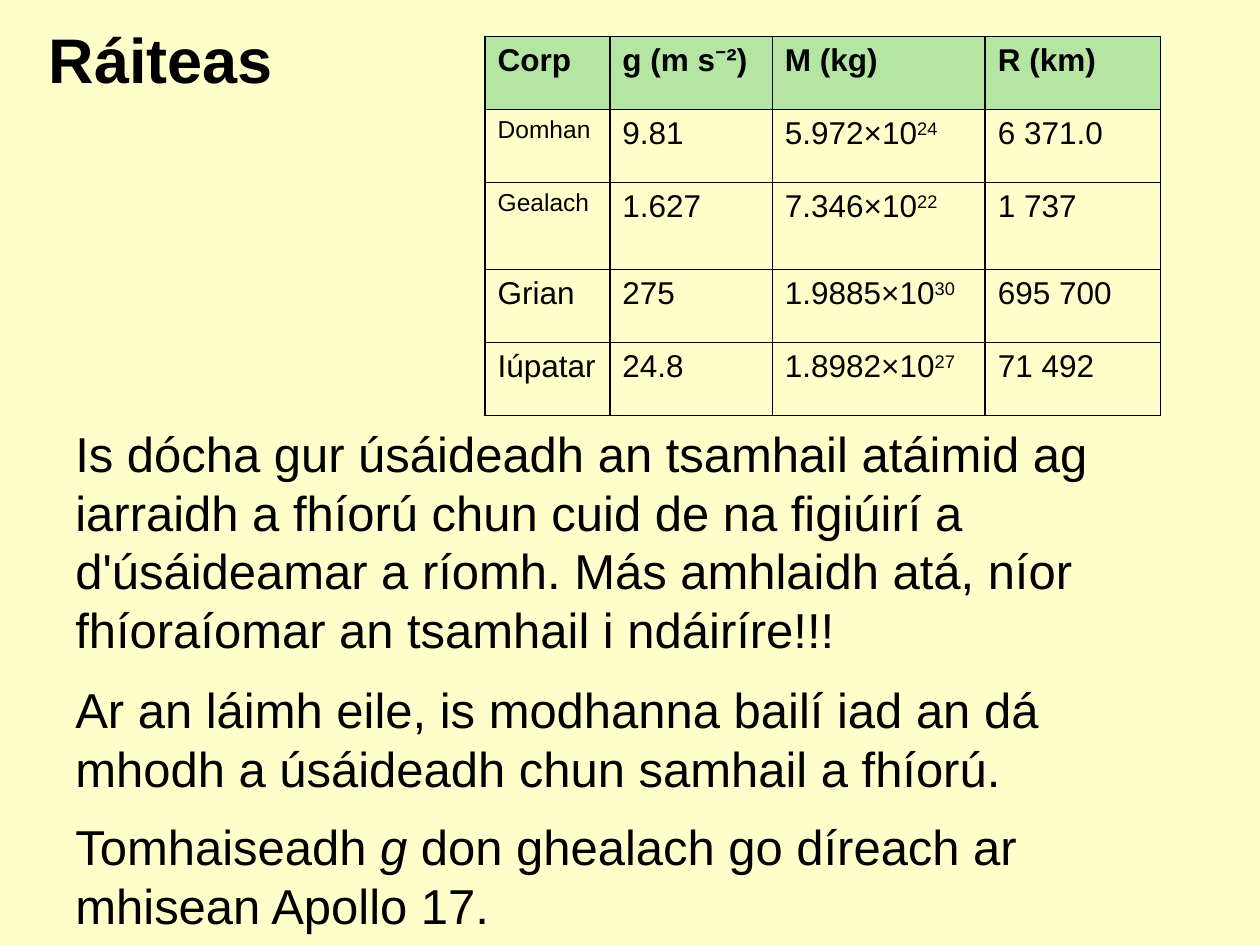
from lxml.etree import SubElement
from pptx import Presentation
from pptx.dml.color import RGBColor
from pptx.oxml.ns import qn
from pptx.util import Inches, Pt

CREAM = RGBColor(0xFF, 0xFF, 0xCC)
GREEN = RGBColor(0xB4, 0xE5, 0xA2)
BLACK = RGBColor(0, 0, 0)
FONT = "Arial"

COLUMN_WIDTHS = [0.99, 1.29, 1.69, 1.39]
ROW_HEIGHTS = [0.58, 0.58, 0.69, 0.58, 0.58]
HEADINGS = ["Corp", "g (m s⁻²)", "M (kg)", "R (km)"]
# Body, size of its name, gravity, mass digits, power of ten, radius
BODIES = [
    ("Domhan", 14, "9.81", "5.972", "24", "6 371.0"),
    ("Gealach", 14, "1.627", "7.346", "22", "1 737"),
    ("Grian", 18, "275", "1.9885", "30", "695 700"),
    ("Iúpatar", 18, "24.8", "1.8982", "27", "71 492"),
]


def add_span(para, text, size, bold=False, italic=False, superscript=False):
    span = para.add_run()
    span.text = text
    font = span.font
    font.name = FONT
    font.size = Pt(size)
    font.bold = bold
    font.italic = italic
    font.color.rgb = BLACK
    if superscript:
        span._r.get_or_add_rPr().set("baseline", "30000")


def add_text(page, left, top, width, height, paragraphs, size,
             bold=False, space_after=0, line_spacing=1.0):
    """Each paragraph is a list of (text, italic) pairs."""
    box = page.shapes.add_textbox(Inches(left), Inches(top), Inches(width), Inches(height))
    frame = box.text_frame
    frame.word_wrap = True
    for index, pieces in enumerate(paragraphs):
        para = frame.add_paragraph() if index else frame.paragraphs[0]
        para.space_after = Pt(space_after)
        para.line_spacing = line_spacing
        for text, italic in pieces:
            add_span(para, text, size, bold, italic)


def add_borders(cell):
    properties = cell._tc.get_or_add_tcPr()
    for index, side in enumerate(("a:lnL", "a:lnR", "a:lnT", "a:lnB")):
        line = properties.makeelement(qn(side), {"w": str(Pt(1))})
        fill = SubElement(line, qn("a:solidFill"))
        SubElement(fill, qn("a:srgbClr"), val=str(BLACK))
        properties.insert(index, line)


def add_bodies_table(page):
    frame = page.shapes.add_table(
        len(ROW_HEIGHTS), len(COLUMN_WIDTHS), Inches(3.85), Inches(0.29),
        Inches(sum(COLUMN_WIDTHS)), Inches(sum(ROW_HEIGHTS)))
    table = frame.table
    table.horz_banding = False
    for column, width in zip(table.columns, COLUMN_WIDTHS):
        column.width = Inches(width)
    for row, height in zip(table.rows, ROW_HEIGHTS):
        row.height = Inches(height)

    # Header row
    for cell, heading in zip(table.rows[0].cells, HEADINGS):
        cell.fill.solid()
        cell.fill.fore_color.rgb = GREEN
        add_span(cell.text_frame.paragraphs[0], heading, 18, bold=True)
        add_borders(cell)

    # One row for each body
    for number, (name, name_size, gravity, mass, power, radius) in enumerate(BODIES, 1):
        cells = list(table.rows[number].cells)
        texts = [name, gravity, f"{mass}×10", radius]
        sizes = [name_size, 18, 18, 18]
        for cell, text, size in zip(cells, texts, sizes):
            cell.fill.background()
            add_span(cell.text_frame.paragraphs[0], text, size)
            add_borders(cell)
        add_span(cells[2].text_frame.paragraphs[0], power, 18, superscript=True)


def main():
    deck = Presentation()
    deck.slide_width = Inches(10)
    deck.slide_height = Inches(7.5)
    page = deck.slides.add_slide(deck.slide_layouts[6])
    page.background.fill.solid()
    page.background.fill.fore_color.rgb = CREAM

    # Title
    add_text(page, 0.29, 0.18, 9.49, 0.65, [[("Ráiteas", False)]], 36,
             bold=True, line_spacing=0.9)

    add_bodies_table(page)

    # Discussion
    add_text(page, 0.5, 3.31, 9, 3.1, [
        [("Is dócha gur úsáideadh an tsamhail atáimid ag iarraidh a fhíorú chun "
          "cuid de na figiúirí a d'úsáideamar a ríomh. Más amhlaidh atá, níor "
          "fhíoraíomar an tsamhail i ndáiríre!!!", False)],
        [("Ar an láimh eile, is modhanna bailí iad an dá mhodh a úsáideadh chun "
          "samhail a fhíorú.", False)],
    ], 28, space_after=12)

    # Direct measurement
    add_text(page, 0.5, 6.43, 8.71, 1.04, [
        [("Tomhaiseadh ", False), ("g", True),
         (" don ghealach go díreach ar mhisean Apollo 17.", False)],
    ], 28, space_after=12)

    deck.save("out.pptx")


if __name__ == "__main__":
    main()
